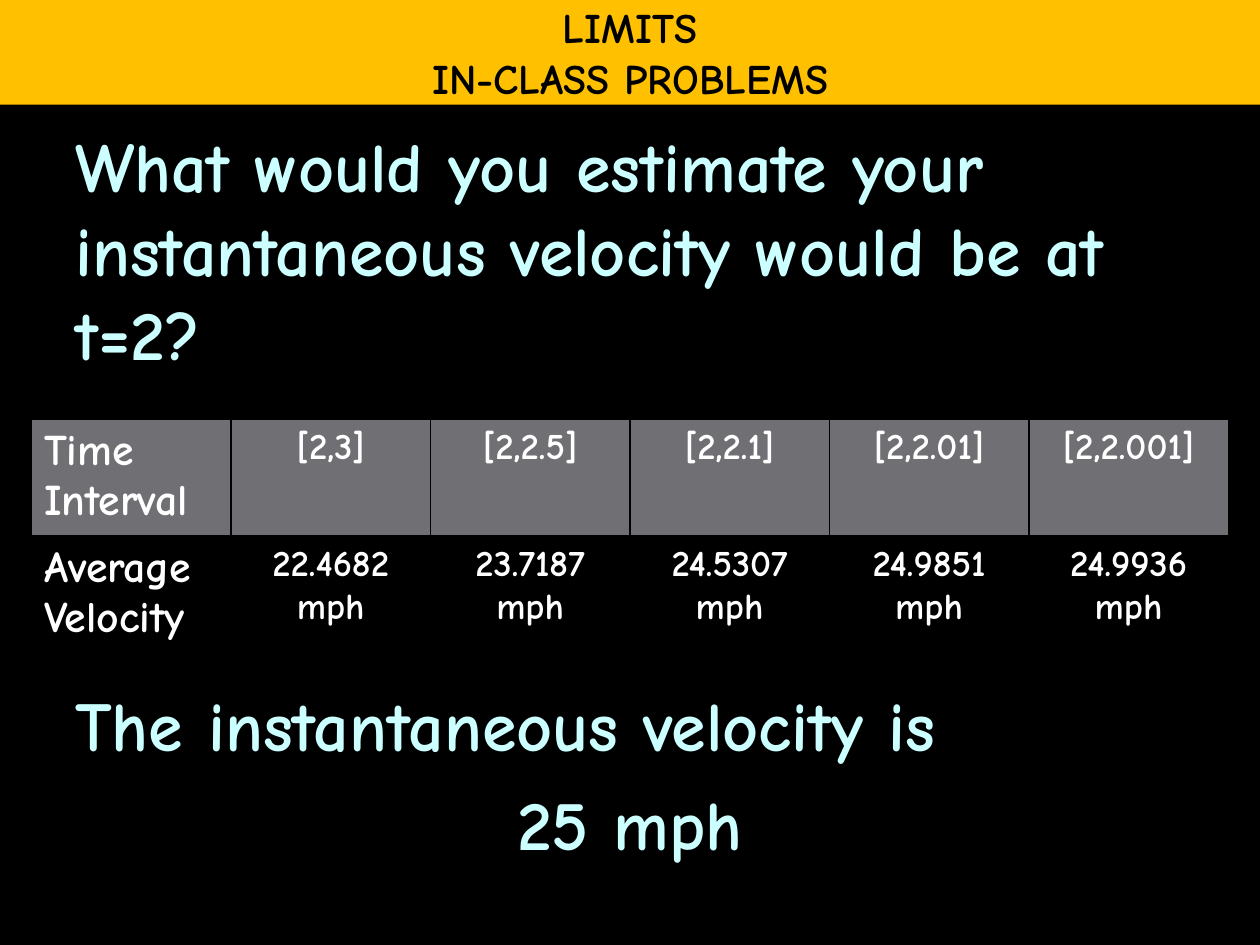
from typing import NamedTuple

from lxml import etree
from pptx import Presentation
from pptx.dml.color import RGBColor
from pptx.enum.text import MSO_ANCHOR, MSO_AUTO_SIZE, PP_ALIGN
from pptx.oxml.ns import qn
from pptx.util import Inches, Pt

LEFT, CENTER = PP_ALIGN.LEFT, PP_ALIGN.CENTER
MIDDLE = MSO_ANCHOR.MIDDLE
NO_AUTOFIT = MSO_AUTO_SIZE.NONE

FONT = "Comic Neue"
COLORS = {
    "black": "000000",
    "banner": "FFC000",
    "prompt": "CCFFFF",
    "header": "6F6F74",
    "white": "FFFFFF",
}


class Line(NamedTuple):
    text: str
    align: PP_ALIGN = LEFT


class Prompt(NamedTuple):
    top: float
    height: float
    lines: list[Line]


class Measurement(NamedTuple):
    interval: str
    velocity: str


PROMPTS = [
    Prompt(0.92, 2.2, [
        Line("What would you estimate your instantaneous velocity would be at t=2?"),
    ]),
    Prompt(5.36, 1.6, [
        Line("The instantaneous velocity is"),
        Line("25 mph", CENTER),
    ]),
]
MEASUREMENTS = [
    Measurement("[2,3]", "22.4682"),
    Measurement("[2,2.5]", "23.7187"),
    Measurement("[2,2.1]", "24.5307"),
    Measurement("[2,2.01]", "24.9851"),
    Measurement("[2,2.001]", "24.9936"),
]


def rgb(name: str) -> RGBColor:
    return RGBColor.from_string(COLORS[name])


def set_fill(item, color: str) -> None:
    item.fill.solid()
    item.fill.fore_color.rgb = rgb(color)


def style_paragraph(para, size: float, color: str, align: PP_ALIGN) -> None:
    para.alignment = align
    para.font.name = FONT
    para.font.size = Pt(size)
    para.font.bold = True
    para.font.color.rgb = rgb(color)


def add_banner(slide) -> None:
    title = slide.shapes.title
    title.left, title.top = 0, 0
    title.width, title.height = Inches(10), Inches(0.83)
    set_fill(title, "banner")
    frame = title.text_frame
    frame.text = "LIMITS\nIN-CLASS PROBLEMS"
    frame.auto_size = NO_AUTOFIT
    frame.word_wrap = False
    frame.vertical_anchor = MIDDLE
    for para in frame.paragraphs:
        style_paragraph(para, 24, "black", CENTER)


def add_prompt(slide, prompt: Prompt) -> None:
    box = slide.shapes.add_textbox(
        Inches(0.5), Inches(prompt.top), Inches(9), Inches(prompt.height))
    frame = box.text_frame
    frame.word_wrap = True
    frame.text = "\n".join(line.text for line in prompt.lines)
    for index, (para, line) in enumerate(zip(frame.paragraphs, prompt.lines)):
        style_paragraph(para, 40, "prompt", line.align)
        if index:
            para.space_before = Pt(8.5)


def set_borders(cell, bottom_width: float) -> None:
    properties = cell._tc.get_or_add_tcPr()
    widths = {"a:lnL": 1, "a:lnR": 1, "a:lnT": 1, "a:lnB": bottom_width}
    for tag, width in widths.items():
        border = etree.SubElement(properties, qn(tag), w=str(Pt(width)))
        fill = etree.SubElement(border, qn("a:solidFill"))
        etree.SubElement(fill, qn("a:srgbClr"), val=COLORS["black"])


def add_velocity_table(slide, measurements: list[Measurement]) -> None:
    rows = [
        ["Time Interval"] + [item.interval for item in measurements],
        ["Average Velocity"] + [f"{item.velocity}\nmph" for item in measurements],
    ]
    table = slide.shapes.add_table(
        len(rows), len(rows[0]),
        Inches(0.25), Inches(3.33), Inches(9.5), Inches(1.87)).table
    table.rows[0].height = Inches(0.87)
    table.rows[1].height = Inches(1)
    for row, texts in enumerate(rows):
        for column, text in enumerate(texts):
            cell = table.cell(row, column)
            cell.text = text
            set_borders(cell, 1 if row else 3)
            set_fill(cell, "black" if row else "header")
            size, align = (21, CENTER) if column else (25, LEFT)
            for para in cell.text_frame.paragraphs:
                style_paragraph(para, size, "white", align)


def main() -> None:
    deck = Presentation()
    deck.slide_width, deck.slide_height = Inches(10), Inches(7.5)
    slide = deck.slides.add_slide(deck.slide_layouts.get_by_name("Title Only"))
    set_fill(slide.background, "black")
    add_banner(slide)
    for prompt in PROMPTS:
        add_prompt(slide, prompt)
    add_velocity_table(slide, MEASUREMENTS)
    deck.save("out.pptx")


if __name__ == "__main__":
    main()
